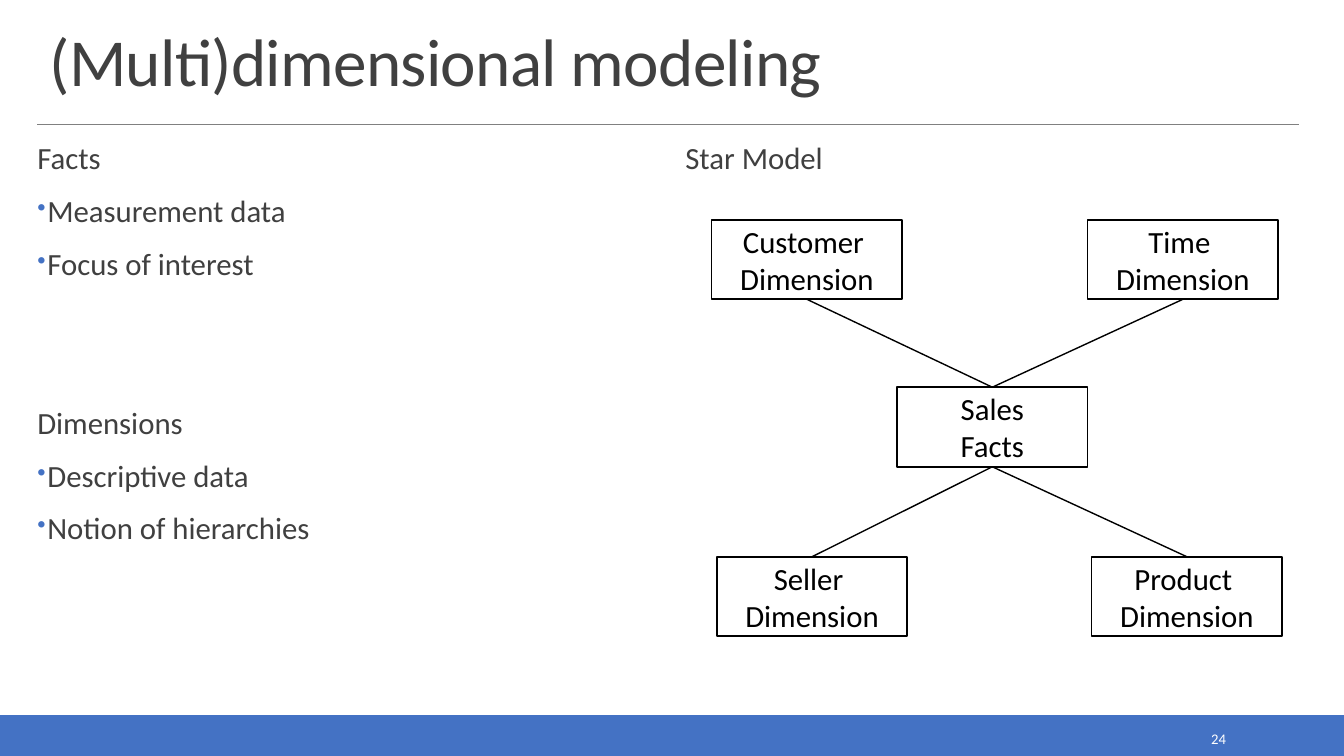
from lxml import etree
from pptx import Presentation
from pptx.dml.color import RGBColor as RGB
from pptx.enum.shapes import MSO_CONNECTOR as CONN, MSO_SHAPE as SHAPE
from pptx.enum.text import MSO_ANCHOR as ANCHOR, MSO_AUTO_SIZE as FIT, PP_ALIGN as ALIGN
from pptx.oxml.ns import qn
from pptx.util import Inches, Pt

COLORS = {"accent": "4472C4", "text": "404040", "rule": "808080",
          "black": "000000", "white": "FFFFFF"}
FONT = "Calibri"
SLIDE = (0, 0, Inches(13.333), Inches(7.5))
TOP, BOTTOM = 0, 2


def rgb(name):
    return RGB.from_string(COLORS[name])


def part(box, x, y, w, h):
    left, top, width, height = box
    return (int(left + width * x / 100), int(top + height * y / 100),
            int(width * w / 100), int(height * h / 100))


def add_bullet(p):
    pPr = p._p.get_or_add_pPr()
    pPr.set("marL", str(Inches(0.1)))
    pPr.set("indent", str(-Inches(0.1)))
    clr = etree.SubElement(pPr, qn("a:buClr"))
    etree.SubElement(clr, qn("a:srgbClr"), val=COLORS["accent"])
    etree.SubElement(pPr, qn("a:buSzPct"), val="80000")
    etree.SubElement(pPr, qn("a:buChar"), char="•")


def write(p, text, size=22, color="text", align=ALIGN.LEFT, line=1.0,
          before=0, after=0, bullet=False, spacing=None):
    p.alignment, p.line_spacing = align, line
    p.space_before, p.space_after = Pt(before), Pt(after)
    if bullet:
        add_bullet(p)
    for i, row in enumerate(text.split("\n")):
        if i:
            p.add_line_break()
        r = p.add_run()
        r.text = row
        r.font.name, r.font.size = FONT, Pt(size)
        r.font.color.rgb = rgb(color)
        if spacing is not None:
            r._r.get_or_add_rPr().set("spc", str(int(spacing * 100)))


def add_rect(slide, box, line, fill=None):
    s = slide.shapes.add_shape(SHAPE.RECTANGLE, *box)
    s.shadow.inherit = False
    if fill:
        s.fill.solid()
        s.fill.fore_color.rgb = rgb(fill)
    else:
        s.fill.background()
    s.line.color.rgb, s.line.width = rgb(line), Pt(1.25)
    return s


def add_line(slide, start, end, color, width):
    c = slide.shapes.add_connector(CONN.STRAIGHT, *start, *end)
    c.line.color.rgb, c.line.width = rgb(color), Pt(width)
    etree.SubElement(c._element.spPr, qn("a:effectLst"))
    return c


def add_header(slide, box):
    s = slide.shapes.title
    s.left, s.top, s.width, s.height = part(box, 2.93, 2.67, 93.9, 11.2)
    tf = s.text_frame
    tf.auto_size, tf.vertical_anchor = FIT.NONE, ANCHOR.BOTTOM
    write(tf.paragraphs[0], "(Multi)dimensional modeling", size=48, line=0.85, spacing=-0.5)
    x, y, w, _ = part(box, 2.78, 16.4, 93.9, 0)
    add_line(slide, (x, y), (x + w, y), "rule", 0.5)


def add_footer(slide, box):
    add_rect(slide, part(box, 0, 94.67, 100, 5.33), "accent", "accent")
    tf = slide.shapes.add_textbox(*part(box, 81.23, 95.87, 10.73, 3.73)).text_frame
    tf.word_wrap, tf.vertical_anchor = True, ANCHOR.MIDDLE
    write(tf.paragraphs[0], "24", size=10.5, color="white", align=ALIGN.RIGHT)


def add_outline(slide, box, sections):
    tf = slide.shapes.add_textbox(*box).text_frame
    tf.word_wrap = True
    tf.margin_left = tf.margin_right = 0
    tf.margin_top = tf.margin_bottom = Inches(0.04)
    for i, (heading, items) in enumerate(sections):
        p = tf.add_paragraph() if i else tf.paragraphs[0]
        write(p, heading, line=0.9, before=87.6 if i else 12, after=2)
        for item in items:
            write(tf.add_paragraph(), item, line=0.9, before=12, after=2, bullet=True)


def add_node(slide, box, text):
    s = add_rect(slide, box, "black")
    tf = s.text_frame
    tf.word_wrap, tf.vertical_anchor = True, ANCHOR.MIDDLE
    write(tf.paragraphs[0], text, color="black", align=ALIGN.CENTER)
    return s


def add_star(slide, box):
    def node(text, x, y):
        return add_node(slide, part(box, x, y, 33.4, 19.1), text)

    facts = node("Sales\nFacts", 32.5, 40.2)
    dimensions = [("Customer", 0, 0), ("Time", 65.9, 0),
                  ("Seller", 0.9, 80.9), ("Product", 66.6, 80.9)]
    for name, x, y in dimensions:
        s = node(f"{name} \nDimension", x, y)
        near, far = (BOTTOM, TOP) if s.top < facts.top else (TOP, BOTTOM)
        c = add_line(slide, (0, 0), (0, 0), "black", 1)
        c.begin_connect(s, near)
        c.end_connect(facts, far)


def main():
    prs = Presentation()
    prs.slide_width, prs.slide_height = SLIDE[2:]
    slide = prs.slides.add_slide(prs.slide_layouts[5])
    add_footer(slide, SLIDE)
    add_header(slide, SLIDE)
    add_outline(slide, part(SLIDE, 2.78, 18.4, 36, 73.6), [
        ("Facts", ["Measurement data", "Focus of interest"]),
        ("Dimensions", ["Descriptive data", "Notion of hierarchies"])])
    add_outline(slide, part(SLIDE, 51, 18.4, 45.68, 8.53), [("Star Model", [])])
    add_star(slide, part(SLIDE, 52.95, 29.07, 42.45, 55.1))
    prs.save("out.pptx")


if __name__ == "__main__":
    main()
